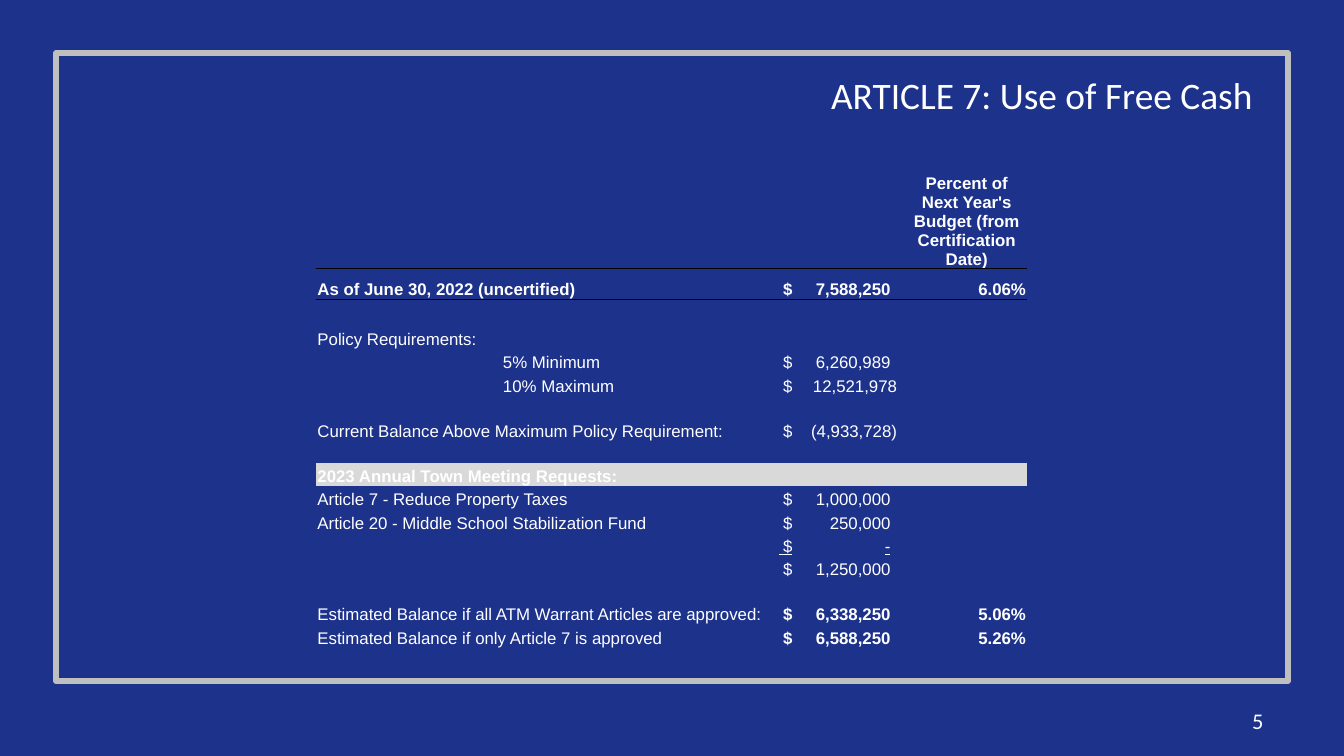
from lxml.etree import SubElement
from pptx import Presentation
from pptx.dml.color import RGBColor
from pptx.enum.shapes import MSO_SHAPE as Shape
from pptx.enum.text import MSO_ANCHOR as Anchor, PP_ALIGN as Align
from pptx.oxml.ns import qn
from pptx.util import Pt

NAVY = RGBColor(0x1D, 0x32, 0x8B)
SILVER = RGBColor(0xBF, 0xBF, 0xBF)
BAND = RGBColor(0xD9, 0xD9, 0xD9)
WHITE = RGBColor(0xFF, 0xFF, 0xFF)
BLACK = RGBColor(0, 0, 0)

PLAIN_TABLE = "{2D5ABB26-0587-4C30-8999-92F81FD0307C}"
COLUMN_WIDTHS = (99.4, 147.6, 69.1, 64.8)
HEADER_HEIGHT, BALANCE_HEIGHT, GAP_HEIGHT = 64, 16.4, 14.2
LINE_HEIGHT, BLANK_HEIGHT = 12.55, 11.6
AMOUNT_TAB, WIDE_AMOUNT_TAB = 60, 63.5
BAND_ROW = 9

ROWS = [
    ("", "", "", "Percent of Next Year's Budget (from Certification Date)"),
    ("As of June 30, 2022 (uncertified)", "", "7,588,250", "6.06%"),
    ("", "", "", ""),
    ("Policy Requirements:", "", "", ""),
    ("", "5% Minimum", "6,260,989", ""),
    ("", "10% Maximum", "12,521,978", ""),
    ("", "", "", ""),
    ("Current Balance Above Maximum Policy Requirement:", "", "(4,933,728)", ""),
    ("", "", "", ""),
    ("2023 Annual Town Meeting Requests:", "", "", ""),
    ("Article 7 - Reduce Property Taxes", "", "1,000,000", ""),
    ("Article 20 - Middle School Stabilization Fund", "", "250,000", ""),
    ("", "", "-", ""),
    ("", "", "1,250,000", ""),
    ("", "", "", ""),
    ("Estimated Balance if all ATM Warrant Articles are approved:", "",
     "6,338,250", "5.06%"),
    ("Estimated Balance if only Article 7 is approved", "", "6,588,250", "5.26%"),
]
MERGED_ROWS = (1, 7, 9, 10, 11, 15, 16)


def apply(target, values):
    for attribute, value in values.items():
        setattr(target, attribute, value)


def write(paragraph, text, size, font, align=Align.LEFT, **extra):
    paragraph.alignment = align
    run = paragraph.add_run()
    run.text = text
    apply(run.font, {"size": Pt(size), "name": font, **extra})
    run.font.color.rgb = WHITE


def add_frame(slide):
    frame = slide.shapes.add_shape(Shape.RECTANGLE, Pt(30), Pt(28.5), Pt(660), Pt(336.5))
    frame.shadow.inherit = False
    frame.fill.background()
    frame.line.color.rgb = SILVER
    frame.line.width = Pt(3)


def add_title(slide):
    title = slide.shapes.title
    apply(title, {"left": Pt(438), "top": Pt(34.8), "width": Pt(246), "height": Pt(31.5)})
    apply(title.text_frame, {"word_wrap": True, "vertical_anchor": Anchor.MIDDLE})
    write(title.text_frame.paragraphs[0], "ARTICLE 7: Use of Free Cash", 20, "Calibri")


def add_page_number(slide):
    number = slide.shapes.add_textbox(Pt(516), Pt(375.2), Pt(168), Pt(21.6))
    apply(number.text_frame, {"word_wrap": True, "vertical_anchor": Anchor.MIDDLE})
    write(number.text_frame.paragraphs[0], "5", 12, "Calibri", Align.RIGHT)


def add_border(cell, side):
    properties = cell._tc.get_or_add_tcPr()
    border = SubElement(properties, qn(f"a:{side}"), w=str(Pt(0.5)))
    fill = SubElement(border, qn("a:solidFill"))
    SubElement(fill, qn("a:srgbClr"), val=str(BLACK))


def add_tab(paragraph, position):
    tabs = SubElement(paragraph._p.get_or_add_pPr(), qn("a:tabLst"))
    SubElement(tabs, qn("a:tab"), pos=str(Pt(position)), algn="r")


def fill_cell(cell, row, column, text):
    apply(cell, {"margin_left": Pt(0.7), "margin_right": Pt(0.7), "margin_top": Pt(0.7),
                 "margin_bottom": 0, "vertical_anchor": Anchor.BOTTOM})
    if row < 2:
        add_border(cell, "lnT" if row else "lnB")
    if row == BAND_ROW:
        cell.fill.solid()
        cell.fill.fore_color.rgb = BAND
    else:
        cell.fill.background()
    paragraph = cell.text_frame.paragraphs[0]
    if not text:
        SubElement(paragraph._p, qn("a:endParaRPr"), sz="900")
        return
    align = Align.LEFT
    if column == 2:
        wide = len(text) > len("1,000,000")
        add_tab(paragraph, WIDE_AMOUNT_TAB if wide else AMOUNT_TAB)
        text = f" $\t{text}"
    elif column == 3:
        align = Align.RIGHT if row else Align.CENTER
    bold = row in (0, 1, BAND_ROW) or (row >= 15 and column >= 2)
    write(paragraph, text, 9, "Arial", align, bold=bold, underline=text.endswith("\t-"))


def row_height(row, texts):
    fixed = {0: HEADER_HEIGHT, 1: BALANCE_HEIGHT, 2: GAP_HEIGHT}
    return fixed.get(row, LINE_HEIGHT if any(texts) else BLANK_HEIGHT)


def add_cash_table(slide):
    heights = [row_height(row, texts) for row, texts in enumerate(ROWS)]
    frame = slide.shapes.add_table(len(ROWS), len(COLUMN_WIDTHS), Pt(169.4), Pt(80),
                                   Pt(sum(COLUMN_WIDTHS)), Pt(sum(heights)))
    table = frame.table
    apply(table, {"first_row": False, "horz_banding": False})
    table._tbl.tblPr.find(qn("a:tableStyleId")).text = PLAIN_TABLE
    for column, width in zip(table.columns, COLUMN_WIDTHS):
        column.width = Pt(width)
    for row, texts in enumerate(ROWS):
        table.rows[row].height = Pt(heights[row])
        for column, text in enumerate(texts):
            fill_cell(table.cell(row, column), row, column, text)
    for row in MERGED_ROWS:
        table.cell(row, 0).merge(table.cell(row, 1))


def main():
    deck = Presentation()
    apply(deck, {"slide_width": Pt(720), "slide_height": Pt(405)})
    slide = deck.slides.add_slide(deck.slide_layouts[5])
    slide.background.fill.solid()
    slide.background.fill.fore_color.rgb = NAVY
    add_frame(slide)
    add_title(slide)
    add_page_number(slide)
    add_cash_table(slide)
    deck.save("out.pptx")


if __name__ == "__main__":
    main()
